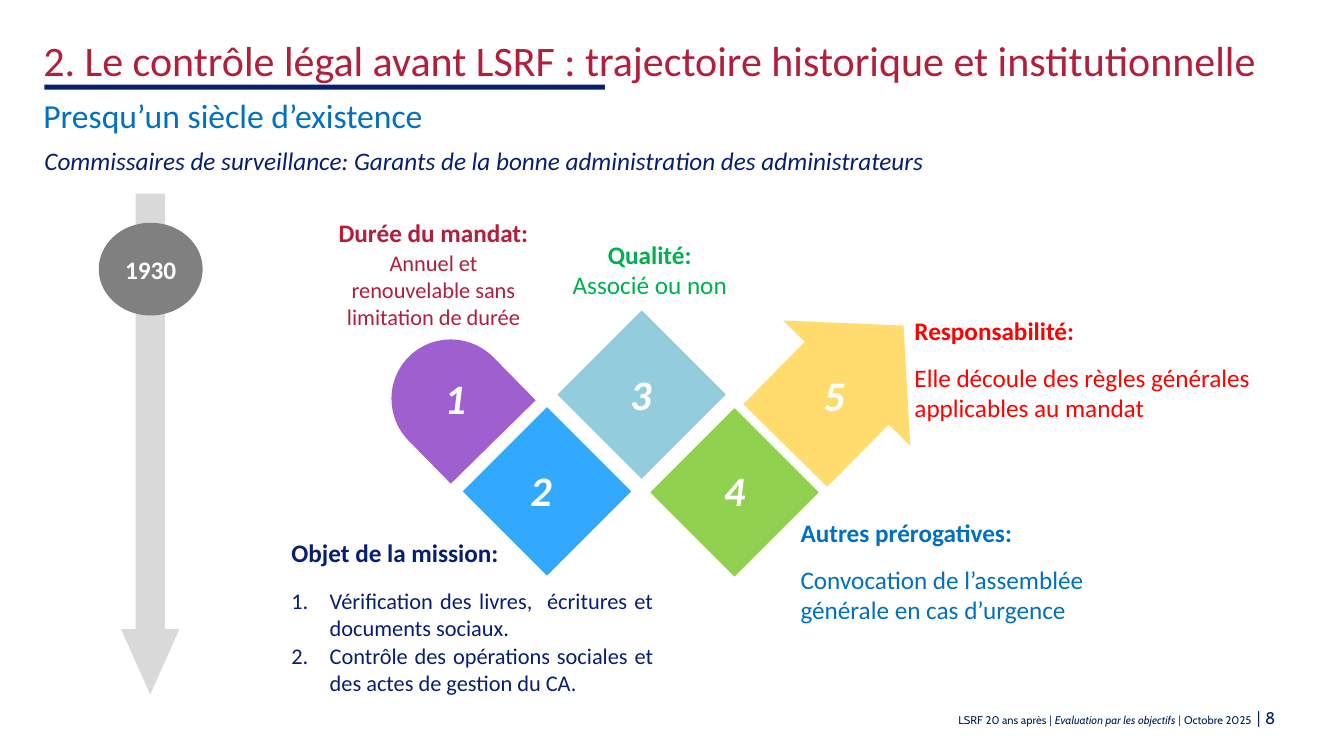
from dataclasses import dataclass

from lxml import etree
from pptx import Presentation
from pptx.dml.color import RGBColor
from pptx.enum.shapes import MSO_SHAPE
from pptx.enum.text import MSO_ANCHOR, MSO_AUTO_SIZE, PP_ALIGN
from pptx.oxml.ns import qn
from pptx.util import Inches, Pt

LEFT, CENTER, RIGHT, JUSTIFY = PP_ALIGN.LEFT, PP_ALIGN.CENTER, PP_ALIGN.RIGHT, PP_ALIGN.JUSTIFY
TOP, MIDDLE = MSO_ANCHOR.TOP, MSO_ANCHOR.MIDDLE
NO_AUTOFIT = MSO_AUTO_SIZE.NONE
DIAMOND, DELAY, UP_ARROW = MSO_SHAPE.DIAMOND, MSO_SHAPE.FLOWCHART_DELAY, MSO_SHAPE.UP_ARROW
DOWN_ARROW, OVAL, RECTANGLE = MSO_SHAPE.DOWN_ARROW, MSO_SHAPE.OVAL, MSO_SHAPE.RECTANGLE
NAVY, CRIMSON, BLUE, WHITE = "071F70", "B31E3A", "0070C0", "FFFFFF"

Box = tuple[float, float, float, float]


@dataclass
class Line:
    text: str
    size: float = 18
    bold: bool = False
    italic: bool = False
    before: float = 1
    numbered: bool = False


@dataclass
class Step:
    number: str
    preset: MSO_SHAPE
    fill: str
    box: Box
    number_at: tuple[float, float]
    rotation: float = 0
    adjustments: tuple[float, ...] = ()


@dataclass
class Caption:
    colour: str
    align: PP_ALIGN
    box: Box
    lines: list[Line]


@dataclass
class FooterPart:
    text: str
    font: str = "Cabin"
    size: float = 8
    italic: bool = False


STEPS = [
    Step("2", DIAMOND, "33A8FF", (4.59, 4.04, 1.67, 1.67), (4.92, 4.56)),
    Step("1", DELAY, "9F5FCF", (3.88, 3.37, 1.19, 1.18), (4.07, 3.65), 225.5),
    Step("3", DIAMOND, "93CDDD", (5.53, 3.08, 1.67, 1.67), (5.91, 3.61)),
    Step("4", DIAMOND, "92D050", (6.45, 4.05, 1.67, 1.67), (6.84, 4.56)),
    Step("5", UP_ARROW, "FFDC6D", (7.49, 2.99, 1.77, 1.67), (7.83, 3.62), 44.6, (0.66, 0.48)),
]

CAPTIONS = [
    Caption(CRIMSON, CENTER, (3.28, 2.15, 2.04, 1.14), [
        Line("Durée du mandat:", bold=True),
        Line("Annuel et renouvelable sans limitation de durée", 16)]),
    Caption("00B050", CENTER, (5.61, 2.36, 1.67, 0.62), [
        Line("Qualité:", bold=True),
        Line("Associé ou non", before=0)]),
    Caption(BLUE, LEFT, (7.94, 5.12, 3.23, 1.09), [
        Line("Autres prérogatives:", bold=True),
        Line("Convocation de l’assemblée générale en cas d’urgence", before=12)]),
    Caption("FF0000", LEFT, (9.07, 3.12, 3.43, 1.09), [
        Line("Responsabilité:", bold=True),
        Line("Elle découle des règles générales applicables au mandat", before=12)]),
    Caption(NAVY, JUSTIFY, (0.44, 1.43, 9.58, 0.32), [
        Line("Commissaires de surveillance: Garants de la bonne administration des administrateurs",
             italic=True)]),
    Caption(BLUE, LEFT, (0.43, 0.93, 5.73, 0.42), [Line("Presqu’un siècle d’existence", 24)]),
]

HEADING = Caption(CRIMSON, LEFT, (0.43, 0.33, 12.17, 0.52), [
    Line("2. Le contrôle légal avant LSRF : trajectoire historique et institutionnelle", 30)])

MISSION = Caption(NAVY, JUSTIFY, (2.89, 5.32, 3.59, 1.6), [
    Line("Objet de la mission:", bold=True),
    Line("Vérification des livres,  écritures et documents sociaux.", 16, before=14, numbered=True),
    Line("Contrôle des opérations sociales et des actes de gestion du CA.", 16, numbered=True)])

FOOTER = [
    FooterPart("LSRF 20 ans après "),
    FooterPart("| ", "Lato"),
    FooterPart("Evaluation par les objectifs ", italic=True),
    FooterPart("| ", "Lato"),
    FooterPart("Octobre 2025  "),
    FooterPart("| ", "Lato", 12),
    FooterPart("8", size=12),
]


def colour(value: str) -> RGBColor:
    return RGBColor.from_string(value)


def place(item, box: Box) -> None:
    item.left, item.top, item.width, item.height = map(Inches, box)


def set_font(font, size: float, value: str, name: str = "Calibri",
             bold: bool = False, italic: bool = False) -> None:
    font.name, font.size, font.bold, font.italic = name, Pt(size), bold, italic
    font.color.rgb = colour(value)


def set_bullet(paragraph, numbered: bool) -> None:
    properties = paragraph._p.get_or_add_pPr()
    hanging = Inches(0.38) if numbered else 0
    properties.set("marL", str(hanging))
    properties.set("indent", str(-hanging))
    if numbered:
        etree.SubElement(properties, qn("a:buFont"), typeface="+mj-lt")
        etree.SubElement(properties, qn("a:buAutoNum"), type="arabicPeriod")
    else:
        etree.SubElement(properties, qn("a:buNone"))


def prepare_frame(frame, top: float = 0.01) -> None:
    frame.word_wrap = True
    frame.auto_size = NO_AUTOFIT
    frame.vertical_anchor = TOP
    frame.margin_left = frame.margin_right = frame.margin_bottom = 0
    frame.margin_top = Inches(top)


def write(holder, caption: Caption) -> None:
    place(holder, caption.box)
    frame = holder.text_frame
    prepare_frame(frame)
    for index, line in enumerate(caption.lines):
        paragraph = frame.add_paragraph() if index else frame.paragraphs[0]
        paragraph.text = line.text
        paragraph.alignment = caption.align
        paragraph.space_before = Pt(line.before)
        set_bullet(paragraph, line.numbered)
        set_font(paragraph.font, line.size, caption.colour, bold=line.bold, italic=line.italic)


def add_preset(slide, preset: MSO_SHAPE, box: Box, fill: str):
    shape = slide.shapes.add_shape(preset, *map(Inches, box))
    shape.shadow.inherit = False
    shape.fill.solid()
    shape.fill.fore_color.rgb = colour(fill)
    shape.line.fill.background()
    return shape


def add_step(slide, step: Step) -> None:
    tile = add_preset(slide, step.preset, step.box, step.fill)
    tile.rotation = step.rotation
    for index, value in enumerate(step.adjustments):
        tile.adjustments[index] = value
    number = slide.shapes.add_textbox(*map(Inches, (*step.number_at, 0.89, 0.61)))
    number.text_frame.word_wrap = True
    paragraph = number.text_frame.paragraphs[0]
    paragraph.text = step.number
    paragraph.alignment = CENTER
    set_font(paragraph.font, 30, WHITE, bold=True, italic=True)


def add_timeline(slide) -> None:
    arrow = add_preset(slide, DOWN_ARROW, (1.2, 1.92, 0.58, 4.97), "D9D9D9")
    arrow.adjustments[1] = 1.12
    year = add_preset(slide, OVAL, (0.98, 2.21, 1.03, 0.92), "808080")
    year.text_frame.vertical_anchor = MIDDLE
    paragraph = year.text_frame.paragraphs[0]
    paragraph.text = "1930"
    paragraph.alignment = CENTER
    set_font(paragraph.font, 18, WHITE, bold=True)


def add_footer(slide) -> None:
    footer = slide.shapes.add_textbox(*map(Inches, (6.98, 7.02, 5.67, 0.2)))
    prepare_frame(footer.text_frame, 0)
    paragraph = footer.text_frame.paragraphs[0]
    paragraph.alignment = RIGHT
    for part in FOOTER:
        run = paragraph.add_run()
        run.text = part.text
        set_font(run.font, part.size, "002060", part.font, italic=part.italic)


def main() -> None:
    deck = Presentation()
    deck.slide_width, deck.slide_height = Inches(13.33), Inches(7.5)
    slide = deck.slides.add_slide(deck.slide_layouts[1])
    title, body = slide.placeholders
    write(body, MISSION)
    for step in STEPS:
        add_step(slide, step)
    add_timeline(slide)
    for caption in CAPTIONS:
        write(slide.shapes.add_textbox(0, 0, 0, 0), caption)
    add_footer(slide)
    add_preset(slide, RECTANGLE, (0.44, 0.84, 5.56, 0.05), "072070")
    write(title, HEADING)
    title.element.getparent().append(title.element)
    deck.save("out.pptx")


if __name__ == "__main__":
    main()
